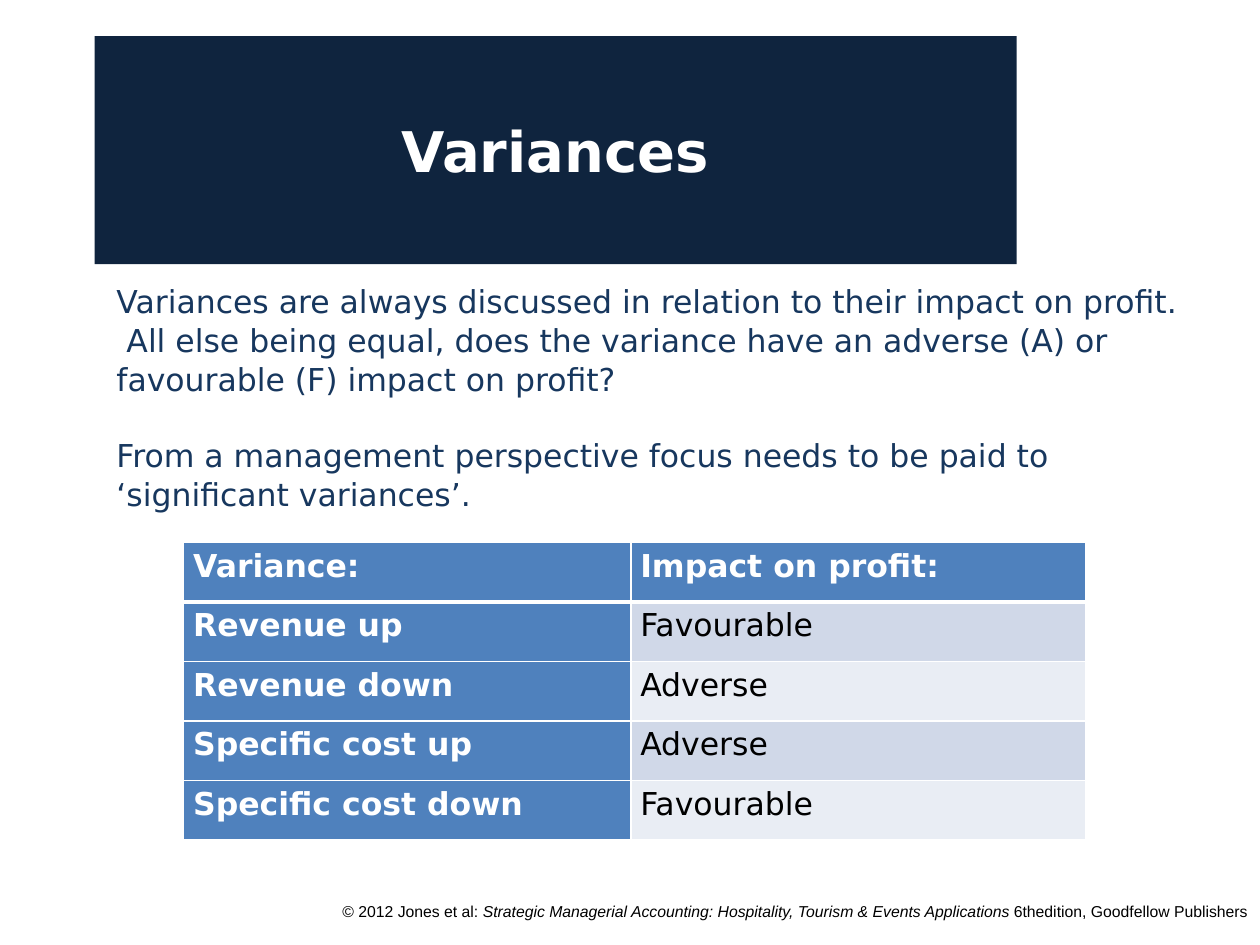
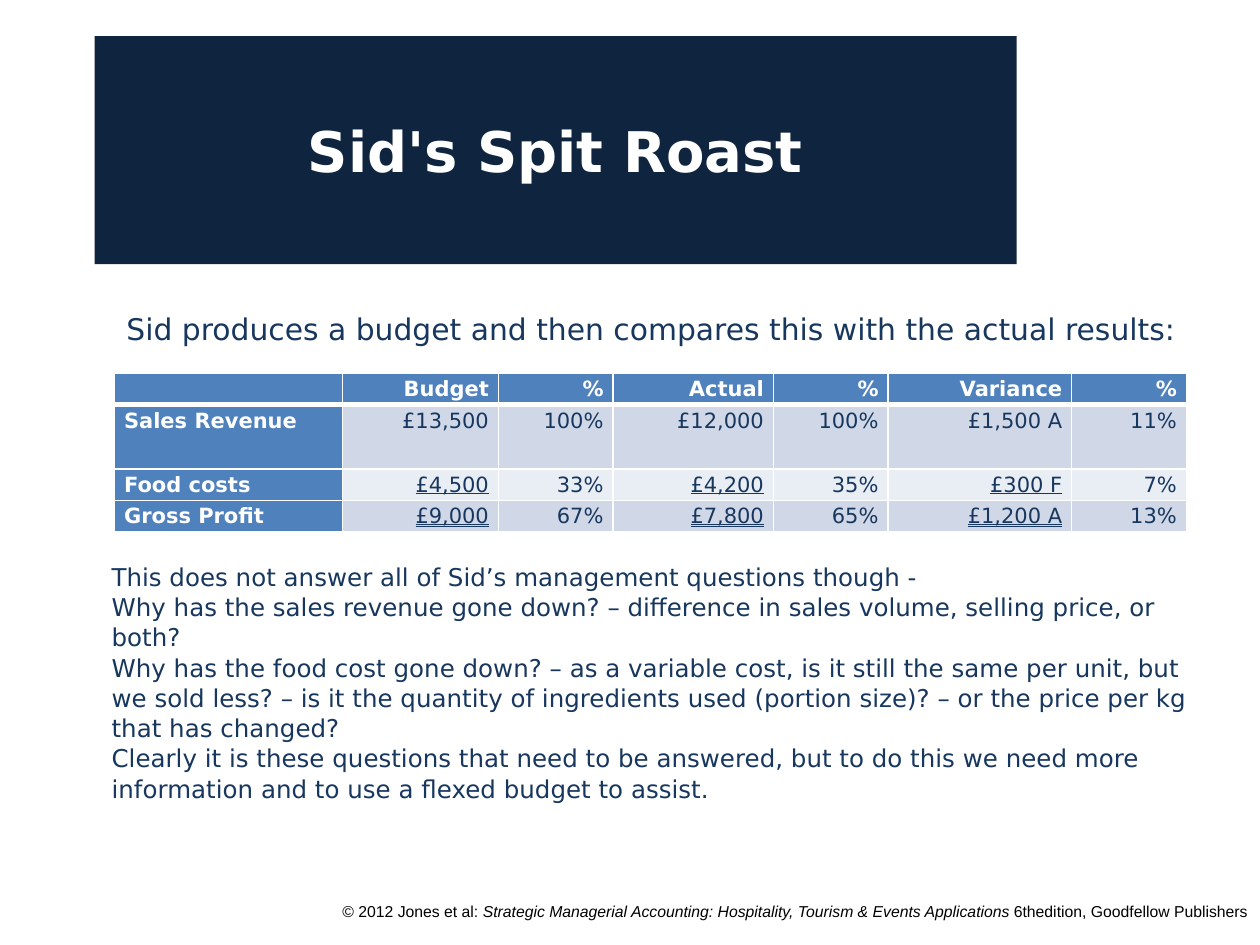
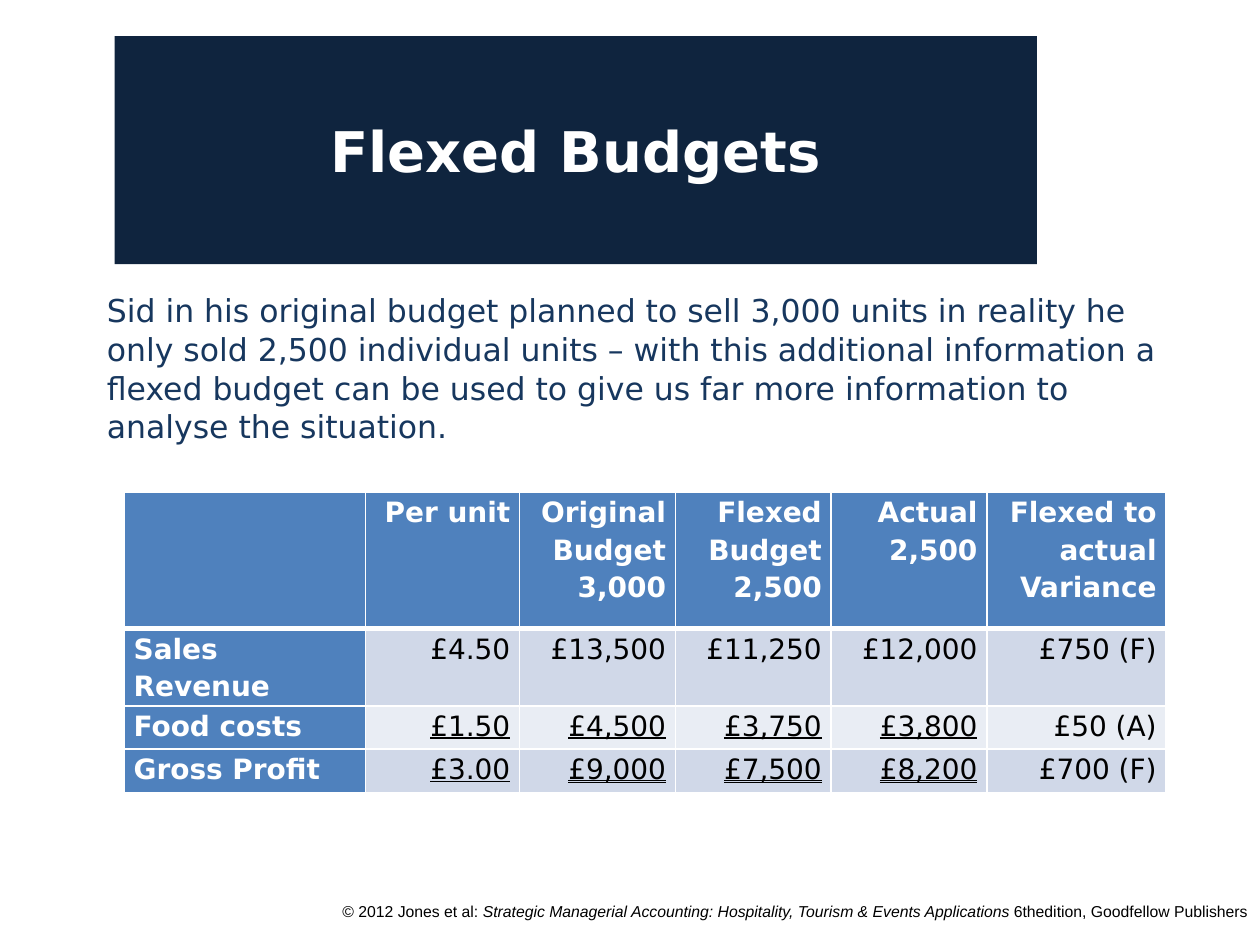
from lxml.etree import SubElement
from pptx import Presentation
from pptx.dml.color import RGBColor
from pptx.enum.text import MSO_ANCHOR, MSO_AUTO_SIZE, MSO_UNDERLINE, PP_ALIGN
from pptx.oxml.ns import qn
from pptx.util import Pt

NAVY = RGBColor(0x0F, 0x24, 0x3E)
TEXT_BLUE = RGBColor(0x17, 0x37, 0x5E)
HEADER_BLUE = RGBColor(0x4F, 0x81, 0xBD)
BAND_DARK = RGBColor(0xD0, 0xD8, 0xE8)
BAND_LIGHT = RGBColor(0xE9, 0xED, 0xF4)
WHITE = RGBColor(0xFF, 0xFF, 0xFF)
BLACK = RGBColor(0x00, 0x00, 0x00)
FONT = "DejaVu Sans"
FOOTER = [
    ("© 2012 Jones et al: ", False),
    ("Strategic Managerial Accounting: Hospitality, Tourism & Events Applications ", True),
    ("6thedition, Goodfellow Publishers", False),
]


def add_text(page, left, top, width, height, lines, size, gap=0):
    box = page.shapes.add_textbox(Pt(left), Pt(top), Pt(width), Pt(height))
    frame = box.text_frame
    frame.word_wrap = True
    frame.text = "\n".join(lines)
    for index, para in enumerate(frame.paragraphs):
        para.line_spacing = 1.03
        if index:
            para.space_before = Pt(gap)
        para.font.name = FONT
        for span in para.runs:
            span.font.name = FONT
            span.font.size = Pt(size)
            span.font.color.rgb = TEXT_BLUE


def add_grid(page, left, top, widths, heights, rows, size, color, number_align):
    table = page.shapes.add_table(
        len(rows), len(widths), Pt(left), Pt(top), Pt(sum(widths)), Pt(sum(heights))
    ).table
    for column, width in zip(table.columns, widths):
        column.width = Pt(width)
    for row_index, (row, height) in enumerate(zip(rows, heights)):
        table.rows[row_index].height = Pt(height)
        for column_index, words in enumerate(row):
            cell = table.cell(row_index, column_index)
            is_heading = row_index == 0 or column_index == 0
            cell.margin_left = cell.margin_right = Pt(5.4)
            cell.margin_top = cell.margin_bottom = Pt(0)
            thick_edge = {0: "lnB", 1: "lnT"}.get(row_index)
            for edge in ("lnL", "lnR", "lnT", "lnB"):
                weight = Pt(3 if edge == thick_edge else 1)
                line = SubElement(cell._tc.get_or_add_tcPr(), qn(f"a:{edge}"), w=str(weight))
                SubElement(SubElement(line, qn("a:solidFill")), qn("a:srgbClr"), val=str(WHITE))
            cell.fill.solid()
            band = BAND_DARK if row_index % 2 else BAND_LIGHT
            cell.fill.fore_color.rgb = HEADER_BLUE if is_heading else band
            cell.text_frame.text = words
            for para in cell.text_frame.paragraphs:
                para.line_spacing = 1.15
                para.alignment = number_align if column_index else PP_ALIGN.LEFT
                if not words:
                    SubElement(para._p, qn("a:endParaRPr"), sz=str(size * 100))
                for span in para.runs:
                    span.font.name = FONT
                    span.font.size = Pt(size)
                    span.font.bold = is_heading
                    span.font.color.rgb = WHITE if is_heading else color
    return table


deck = Presentation()
deck.slide_width, deck.slide_height = Pt(720), Pt(540)

pages = []
for heading, left in (("Variances", 54), ("Sid's Spit Roast", 54), ("Flexed Budgets", 65.5)):
    page = deck.slides.add_slide(deck.slide_layouts[5])
    pages.append(page)

    title = page.shapes.title
    title.left, title.top, title.width, title.height = Pt(left), Pt(20.6), Pt(527), Pt(130.3)
    title.fill.solid()
    title.fill.fore_color.rgb = NAVY
    title.text_frame.text = heading
    title.text_frame.auto_size = MSO_AUTO_SIZE.NONE
    title.text_frame.vertical_anchor = MSO_ANCHOR.MIDDLE
    para = title.text_frame.paragraphs[0]
    para.alignment = PP_ALIGN.CENTER
    font = para.runs[0].font
    font.name, font.size, font.bold = FONT, Pt(32), True
    font.color.rgb = WHITE

    footer = page.shapes.add_textbox(Pt(160.5), Pt(512), Pt(559.5), Pt(28))
    footer.text_frame.word_wrap = True
    para = footer.text_frame.paragraphs[0]
    para.alignment = PP_ALIGN.RIGHT
    for words, is_italic in FOOTER:
        span = para.add_run()
        span.text = words
        span.font.name, span.font.size, span.font.italic = "Arial", Pt(9), is_italic
        span.font.color.rgb = BLACK

variances, spit_roast, flexed = pages

add_text(variances, 59.5, 157, 623.5, 138, [
    "Variances are always discussed in relation to their impact on profit.  All else being equal, "
    "does the variance have an adverse (A) or favourable (F) impact on profit?",
    "From a management perspective focus needs to be paid to ‘significant variances’.",
], 18, gap=21.6)
add_grid(variances, 105, 310, [255.5, 260], [34] * 5, [
    ("Variance:", "Impact on profit:"),
    ("Revenue up", "Favourable"),
    ("Revenue down", "Adverse"),
    ("Specific cost up", "Adverse"),
    ("Specific cost down", "Favourable"),
], 18, BLACK, PP_ALIGN.LEFT)

add_text(spit_roast, 65.2, 173.5, 629.3, 28, [
    "Sid produces a budget and then compares this with the actual results:",
], 17)
result_table = add_grid(
    spit_roast, 65.5, 213.3, [130.3, 89, 65.5, 91.7, 65.5, 105, 65.5], [18, 36.7, 18, 18], [
        ("", "Budget", "%", "Actual", "%", "Variance", "%"),
        ("Sales Revenue", "£13,500", "100%", "£12,000", "100%", "£1,500 A", "11%"),
        ("Food costs", "£4,500", "33%", "£4,200", "35%", "£300 F", "7%"),
        ("Gross Profit", "£9,000", "67%", "£7,800", "65%", "£1,200 A", "13%"),
    ], 12, TEXT_BLUE, PP_ALIGN.RIGHT)
add_text(spit_roast, 56.7, 317, 646.5, 163, [
    "This does not answer all of Sid’s management questions though -",
    "Why has the sales revenue gone down? – difference in sales volume, selling price, or both?",
    "Why has the food cost gone down? – as a variable cost, is it still the same per unit, but we "
    "sold less? – is it the quantity of ingredients used (portion size)? – or the price per kg "
    "that has changed?",
    "Clearly it is these questions that need to be answered, but to do this we need more "
    "information and to use a flexed budget to assist.",
], 14)

add_text(flexed, 54, 162, 635, 96.5, [
    "Sid in his original budget planned to sell 3,000 units in reality he only sold 2,500 "
    "individual units – with this additional information a flexed budget can be used to give us "
    "far more information to analyse the situation.",
], 18)
flexed_table = add_grid(
    flexed, 71, 281.3, [138, 88, 89, 89, 89, 102.4], [78, 43, 24.7, 24.7], [
        ("", "Per unit", "Original Budget\n3,000", "Flexed Budget\n2,500", "Actual\n2,500",
         "Flexed to actual Variance"),
        ("Sales Revenue", "£4.50", "£13,500", "£11,250", "£12,000", "£750 (F)"),
        ("Food costs", "£1.50", "£4,500", "£3,750", "£3,800", "£50 (A)"),
        ("Gross Profit", "£3.00", "£9,000", "£7,500", "£8,200", "£700 (F)"),
    ], 16, BLACK, PP_ALIGN.RIGHT)

SINGLE, DOUBLE = MSO_UNDERLINE.SINGLE_LINE, MSO_UNDERLINE.DOUBLE_LINE
for table, row_index, columns, underline in (
    (result_table, 2, (1, 3, 5), SINGLE),
    (result_table, 3, (1, 3, 5), DOUBLE),
    (flexed_table, 2, (1, 2, 3, 4), SINGLE),
    (flexed_table, 3, (1,), SINGLE),
    (flexed_table, 3, (2, 3, 4), DOUBLE),
):
    for column_index in columns:
        span = table.cell(row_index, column_index).text_frame.paragraphs[0].runs[0]
        span.font.underline = underline

deck.save("out.pptx")
